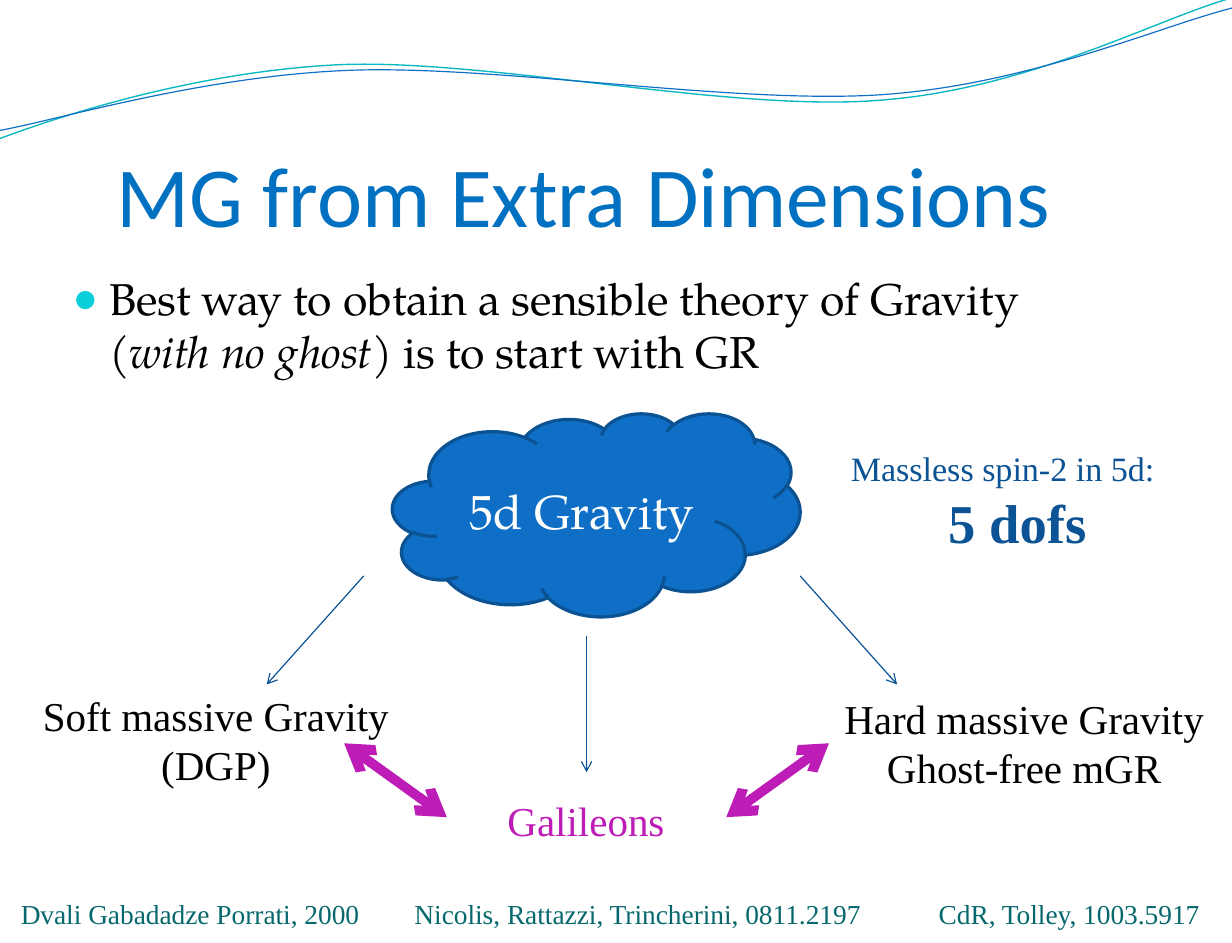
from dataclasses import dataclass

from lxml.etree import SubElement
from pptx import Presentation
from pptx.dml.color import RGBColor
from pptx.enum.shapes import MSO_CONNECTOR, MSO_SHAPE
from pptx.enum.text import MSO_ANCHOR, MSO_AUTO_SIZE, PP_ALIGN
from pptx.oxml.ns import qn
from pptx.slide import Slide
from pptx.text.text import TextFrame
from pptx.util import Pt

PX = 9144  # 100 px to the inch
SLIDE_WIDTH, SLIDE_HEIGHT = 1067, 817

BLACK = RGBColor(0x00, 0x00, 0x00)
WHITE = RGBColor(0xFF, 0xFF, 0xFF)
TITLE_BLUE = RGBColor(0x00, 0x70, 0xC0)
CLOUD_BLUE = RGBColor(0x0F, 0x6F, 0xC6)
CLOUD_EDGE = RGBColor(0x0B, 0x52, 0x92)
ARROW_BLUE = RGBColor(0x09, 0x52, 0x95)
DOF_BLUE = RGBColor(0x0B, 0x53, 0x94)
WAVE_TEAL = RGBColor(0x0A, 0xB8, 0xBF)
BULLET_CYAN = RGBColor(0x0B, 0xD0, 0xD9)
CITATION_TEAL = RGBColor(0x06, 0x68, 0x6C)
MAGENTA = RGBColor(0xBE, 0x1C, 0xB6)

SANS, PALATINO, TIMES = "Calibri", "TeX Gyre Pagella", "Times New Roman"

Point = tuple[int, int]
Box = tuple[int, int, int, int]


@dataclass(frozen=True)
class Line:
    text: str
    size: float
    color: RGBColor
    font: str = TIMES
    align: PP_ALIGN = PP_ALIGN.CENTER
    bold: bool = False
    italic: bool = False


@dataclass(frozen=True)
class Label:
    box: Box
    lines: tuple[Line, ...]
    wrap: bool = False
    side_inset: int = 11


@dataclass(frozen=True)
class Arrow:
    start: Point
    end: Point
    color: RGBColor = ARROW_BLUE
    weight: float = 0.75
    double: bool = False


@dataclass(frozen=True)
class Wave:
    """A chain of cubic curves: a start, then three points for each curve."""
    points: tuple[Point, ...]
    color: RGBColor
    weight: float


WAVES = (
    Wave(((0, 120), (51, 101), (168, 62), (295, 56), (422, 51), (632, 97),
          (760, 87), (889, 78), (1001, 17), (1064, -1)), WAVE_TEAL, 0.85),
    Wave(((0, 113), (50, 104), (175, 66), (302, 61), (429, 56), (637, 91),
          (765, 82), (892, 73), (1004, 23), (1067, 7)), CLOUD_BLUE, 0.75),
)


def theory(text: str, color: RGBColor = BLACK) -> Line:
    return Line(text, 25.6, color)


def citation(left: int, text: str) -> Label:
    line = Line(text, 17.1, CITATION_TEAL, align=PP_ALIGN.LEFT)
    return Label((left, 772, 428, 39), (line,), wrap=True)


LABELS = (
    Label((25, 593, 324, 97), (theory("Soft massive Gravity"), theory("(DGP)"))),
    Label((719, 596, 336, 97),
          (theory("Hard massive Gravity"), theory("Ghost-free mGR"))),
    Label((428, 684, 159, 54), (theory("Galileons", MAGENTA),)),
    Label((727, 383, 308, 103),
          (Line("Massless spin-2 in 5d:", 21.3, DOF_BLUE, align=PP_ALIGN.LEFT),
           Line("5 dofs", 34.1, DOF_BLUE, bold=True)), wrap=True, side_inset=10),
    citation(7, "Dvali Gabadadze Porrati, 2000"),
    citation(802, "CdR, Tolley, 1003.5917"),
    citation(348, "Nicolis, Rattazzi, Trincherini, 0811.2197"),
)

ARROWS = (
    Arrow((315, 499), (231, 593)),
    Arrow((508, 551), (508, 669)),
    Arrow((693, 499), (777, 593)),
    Arrow((387, 708), (298, 644), MAGENTA, 6, double=True),
    Arrow((629, 708), (718, 644), MAGENTA, 6, double=True),
)


def emu(box: Box) -> list[int]:
    return [length * PX for length in box]


def set_frame(frame: TextFrame, insets: Box, anchor: MSO_ANCHOR, wrap: bool) -> None:
    frame.auto_size = MSO_AUTO_SIZE.NONE
    frame.word_wrap = wrap
    frame.vertical_anchor = anchor
    (frame.margin_left, frame.margin_top,
     frame.margin_right, frame.margin_bottom) = emu(insets)


def add_run(paragraph, line: Line) -> None:
    run = paragraph.add_run()
    run.text = line.text
    font = run.font
    font.name, font.size = line.font, Pt(line.size)
    font.bold, font.italic = line.bold, line.italic
    font.color.rgb = line.color


def write_lines(frame: TextFrame, lines: tuple[Line, ...]) -> None:
    for index, line in enumerate(lines):
        paragraph = frame.add_paragraph() if index else frame.paragraphs[0]
        paragraph.alignment = line.align
        add_run(paragraph, line)


def add_wave(slide: Slide, wave: Wave) -> None:
    """Lay out the points as segments, then join every three into one curve."""
    builder = slide.shapes.build_freeform(*wave.points[0], scale=PX)
    builder.add_line_segments(wave.points[1:], close=False)
    outline = builder.convert_to_shape()
    drawn_curve = next(outline.element.iter(qn("a:path")))
    segments = drawn_curve.findall(qn("a:lnTo"))
    for i in range(0, len(segments), 3):
        bezier = SubElement(drawn_curve, qn("a:cubicBezTo"))
        for segment in segments[i:i + 3]:
            bezier.append(segment[0])
            drawn_curve.remove(segment)
    outline.shadow.inherit = False
    outline.fill.background()
    outline.line.color.rgb = wave.color
    outline.line.width = Pt(wave.weight)


def add_arrow(slide: Slide, arrow: Arrow) -> None:
    connector = slide.shapes.add_connector(
        MSO_CONNECTOR.STRAIGHT, *emu(arrow.start + arrow.end))
    connector.line.color.rgb = arrow.color
    connector.line.width = Pt(arrow.weight)
    properties = connector.element.spPr
    outline = properties.find(qn("a:ln"))
    for tag in ("a:headEnd", "a:tailEnd") if arrow.double else ("a:tailEnd",):
        SubElement(outline, qn(tag), type="arrow")
    SubElement(properties, qn("a:effectLst"))


def add_label(slide: Slide, label: Label) -> None:
    frame = slide.shapes.add_textbox(*emu(label.box)).text_frame
    insets = (label.side_inset, 5, label.side_inset, 5)
    set_frame(frame, insets, MSO_ANCHOR.TOP, label.wrap)
    write_lines(frame, label.lines)


def add_title(slide: Slide) -> None:
    title = slide.shapes.title
    title.left, title.top, title.width, title.height = emu((101, 89, 814, 123))
    set_frame(title.text_frame, (0, 5, 0, 0), MSO_ANCHOR.BOTTOM, True)
    write_lines(title.text_frame, (
        Line("MG from Extra Dimensions", 53.35, TITLE_BLUE, SANS, PP_ALIGN.LEFT),))


def add_statement(slide: Slide) -> None:
    frame = slide.shapes.add_textbox(*emu((53, 230, 960, 523))).text_frame
    set_frame(frame, (10, 5, 10, 5), MSO_ANCHOR.TOP, True)
    paragraph = frame.paragraphs[0]
    properties = paragraph._p.get_or_add_pPr()
    properties.set("marL", str(32 * PX))
    properties.set("indent", str(-32 * PX))
    bullet_color = SubElement(properties, qn("a:buClr"))
    SubElement(bullet_color, qn("a:srgbClr"), val=str(BULLET_CYAN))
    SubElement(properties, qn("a:buSzPct"), val="95000")
    SubElement(properties, qn("a:buFont"), typeface=TIMES)
    SubElement(properties, qn("a:buChar"), char="●")
    add_run(paragraph, Line("Best way to obtain a sensible theory of Gravity ",
                            27.75, BLACK, PALATINO))
    paragraph.add_line_break()
    for text, italic in (("(", False), ("with no ghost", True),
                         (") is to start with GR", False)):
        add_run(paragraph, Line(text, 27.75, BLACK, PALATINO, italic=italic))


def add_cloud(slide: Slide) -> None:
    cloud = slide.shapes.add_shape(MSO_SHAPE.CLOUD, *emu((340, 358, 353, 176)))
    cloud.shadow.inherit = False
    cloud.fill.solid()
    cloud.fill.fore_color.rgb = CLOUD_BLUE
    cloud.line.color.rgb = CLOUD_EDGE
    cloud.line.width = Pt(2)
    set_frame(cloud.text_frame, (11, 5, 11, 5), MSO_ANCHOR.MIDDLE, True)
    write_lines(cloud.text_frame, (Line("5d Gravity", 29.9, WHITE, PALATINO),))


def main() -> None:
    deck = Presentation()
    deck.slide_width, deck.slide_height = SLIDE_WIDTH * PX, SLIDE_HEIGHT * PX
    slide = deck.slides.add_slide(deck.slide_layouts[5])
    for wave in WAVES:
        add_wave(slide, wave)
    add_title(slide)
    add_statement(slide)
    add_cloud(slide)
    for label in LABELS:
        add_label(slide, label)
    for arrow in ARROWS:
        add_arrow(slide, arrow)
    deck.save("out.pptx")


if __name__ == "__main__":
    main()
